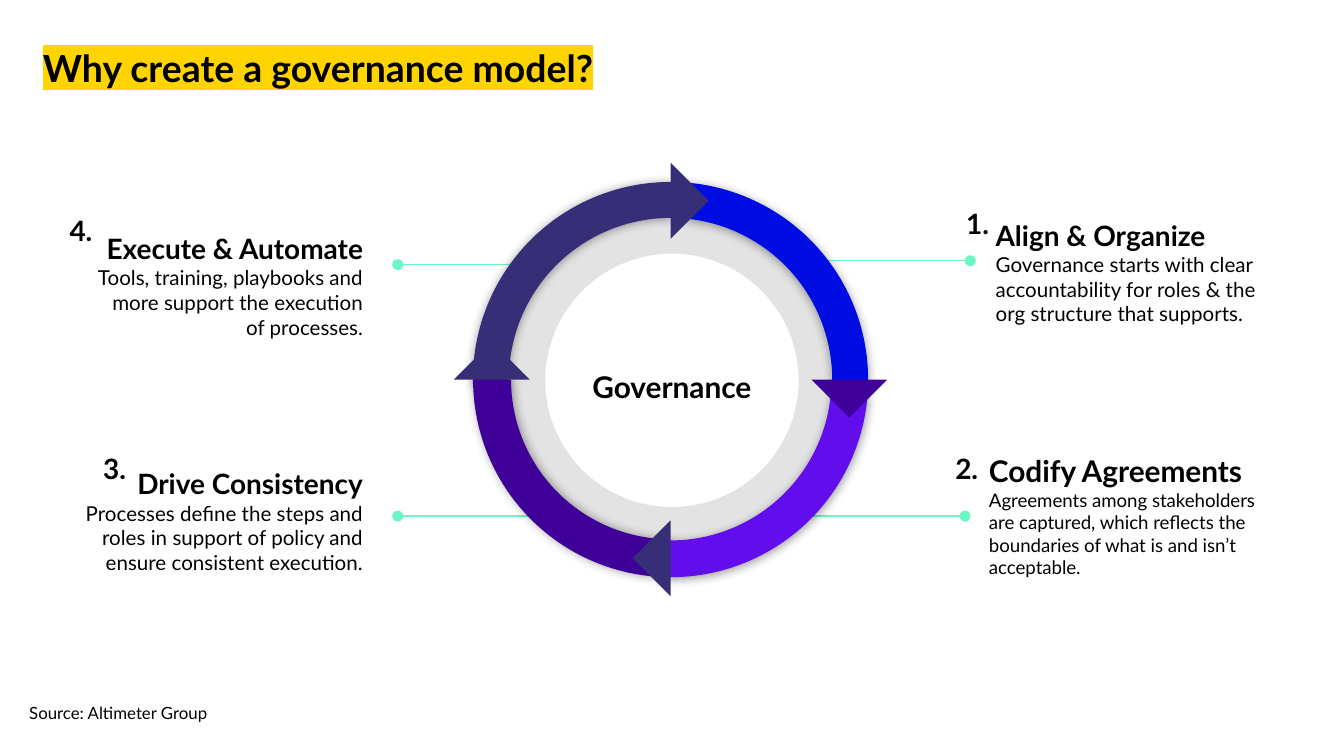
from math import cos, radians, sin

from lxml import etree
from pptx import Presentation
from pptx.dml import color
from pptx.enum import shapes, text
from pptx.oxml import ns
from pptx.util import Pt

FONT = "Lato"
BLACK, MINT, YELLOW = "000000", "6CF7C5", "FFD400"
NAVY, BLUE, PURPLE, VIOLET = "362E77", "000DE2", "3F0099", "620DEC"
LEFT, CENTER, RIGHT = text.PP_ALIGN.LEFT, text.PP_ALIGN.CENTER, text.PP_ALIGN.RIGHT
TOP, MIDDLE = text.MSO_ANCHOR.TOP, text.MSO_ANCHOR.MIDDLE


def rgb(value):
    """Turn a hex string into a colour."""
    return color.RGBColor.from_string(value)


def add_xml(parent, tag, **attributes):
    """Append a DrawingML element and return it."""
    return etree.SubElement(parent, ns.qn(tag), attributes)


def add_colour(parent, value, alpha=None):
    """Append an RGB colour with an optional opacity in percent."""
    colour = add_xml(parent, "a:srgbClr", val=value)
    if alpha is not None:
        add_xml(colour, "a:alpha", val=str(alpha * 1000))


def style(paragraph, size, bold=False, align=LEFT):
    """Set the font and alignment of a paragraph."""
    paragraph.alignment = align
    font = paragraph.font
    font.name, font.size, font.bold = FONT, Pt(size), bold
    font.color.rgb = rgb(BLACK)


def add_text(parts, box, lines, align=LEFT, anchor=TOP):
    """Add a text box holding (wording, size, bold) lines."""
    frame = parts.add_textbox(*map(Pt, box)).text_frame
    frame.word_wrap = True
    frame.vertical_anchor = anchor
    frame.margin_left = frame.margin_right = Pt(7.2)
    frame.margin_top = frame.margin_bottom = Pt(7.2)
    for index, (wording, size, bold) in enumerate(lines):
        paragraph = frame.add_paragraph() if index else frame.paragraphs[0]
        paragraph.text = wording
        style(paragraph, size, bold, align)
    return frame


def add_filled(parts, kind, box, fill, rotation=0):
    """Add a preset shape with a plain fill and no line."""
    shape = parts.add_shape(kind, *map(Pt, box))
    shape.shadow.inherit = False
    shape.fill.solid()
    shape.fill.fore_color.rgb = rgb(fill)
    shape.line.fill.background()
    shape.rotation = rotation
    return shape


def centred(x, y, width, height):
    """Return the box of a given size around a point."""
    return x - width / 2, y - height / 2, width, height


def add_title(slide, box, wording):
    """Place the highlighted slide title."""
    title = slide.shapes.title
    title.left, title.top, title.width, title.height = map(Pt, box)
    frame = title.text_frame
    frame.auto_size = text.MSO_AUTO_SIZE.NONE
    frame.vertical_anchor = TOP
    frame.margin_left = frame.margin_right = Pt(5)
    frame.margin_top = frame.margin_bottom = Pt(2.9)
    frame.text = wording
    paragraph = frame.paragraphs[0]
    style(paragraph, 20, True)
    paragraph.line_spacing = 0.9
    properties = paragraph.runs[0].font._element
    add_colour(add_xml(properties, "a:highlight"), YELLOW)


def add_callout(slide, box, number, number_offset, heading, body, sizes, line_offsets, after, align):
    """Place a numbered explanation and its line to the ring."""
    left, top = box[:2]
    parts = slide.shapes.add_group_shape().shapes
    heading_size, body_size = sizes
    frame = add_text(parts, box, [(heading, heading_size, True), (body, body_size, False)], align, MIDDLE)
    frame.paragraphs[1].space_after = Pt(after)

    start, end, height = line_offsets
    leader = parts.add_connector(
        shapes.MSO_CONNECTOR.STRAIGHT,
        Pt(left + start), Pt(top + height), Pt(left + end), Pt(top + height))
    leader.line.color.rgb = rgb(MINT)
    leader.line.width = Pt(0.75)
    add_xml(leader.line._get_or_add_ln(), "a:tailEnd", type="oval")
    add_xml(leader._element.spPr, "a:effectLst")

    across, down = number_offset
    add_text(slide.shapes, (left + across, top + down, 28.8, 32.4), [(number, 15, True)])


def add_arc(parts, box, start, end, thickness, fill, rotation, flipped, shadow_angle):
    """Add one shadowed quarter of the ring, with angles in degrees."""
    arc = add_filled(parts, shapes.MSO_SHAPE.BLOCK_ARC, box, fill, rotation)
    arc.adjustments[0] = start * 0.6
    arc.adjustments[1] = end * 0.6
    arc.adjustments[2] = thickness
    properties = arc._element.spPr
    if flipped:
        properties.xfrm.set("flipH", "1")
    shadow = add_xml(
        properties.find(ns.qn("a:effectLst")), "a:outerShdw",
        blurRad=str(Pt(5.6)), dist=str(Pt(0.8)), dir=str(shadow_angle * 60000), rotWithShape="0")
    add_colour(shadow, BLACK, 40)


def add_ring(slide, box, label):
    """Place the cycle of four arcs, its arrowheads and its label."""
    left, top, width, height = box
    middle_x, middle_y = left + width / 2, top + height / 2
    parts = slide.shapes

    track = add_filled(parts, shapes.MSO_SHAPE.DONUT, centred(middle_x + 0.7, middle_y + 0.4, 200.2, 200.2), BLACK)
    track.adjustments[0] = 0.161
    track_colour = track.fill._xPr.find(ns.qn("a:solidFill"))[0]
    add_xml(track_colour, "a:alpha", val="11000")

    quarters = [
        (239.14, 331.21, 0.091, NAVY, 330, True, 90),
        (242.43, 331.7, 0.091, BLUE, 30, False, 90),
        (300.7, 29.98, 0.096, PURPLE, 150, False, 0),
        (299.45, 25.49, 0.093, VIOLET, 210, True, 90),
    ]
    for quarter in quarters:
        add_arc(parts, box, *quarter)

    radius = 95.8
    for angle, fill in [(180, NAVY), (0, PURPLE), (90, NAVY), (270, NAVY)]:
        x = middle_x + radius * cos(radians(angle))
        y = middle_y + radius * sin(radians(angle))
        add_filled(parts, shapes.MSO_SHAPE.RIGHT_TRIANGLE, centred(x, y, 28.8, 28.8), fill, (angle - 45) % 360)

    frame = add_text(parts, centred(middle_x + 0.7, middle_y + 2.5, 113.8, 63.4), [(label, 16, True)], CENTER, MIDDLE)
    frame.paragraphs[0].line_spacing = 1.15


def main():
    """Build and save the slide."""
    deck = Presentation()
    deck.slide_width, deck.slide_height = Pt(720), Pt(405)
    slide = deck.slides.add_slide(deck.slide_layouts[5])
    add_title(slide, (18, 23.8, 458.6, 45.4), "Why create a governance model?")

    callouts = [
        ((526.3, 105.8, 160.6, 79.9), "1.", (-15.8, -2.1), "Align & Organize",
         "Governance starts with clear accountability for roles & the org structure that supports.",
         (15, 11), (-87.8, -6.5, 33.9), 16, LEFT),
        ((522.7, 236.2, 157.7, 79.9), "2.", (-18, -1.5), "Codify Agreements",
         "Agreements among stakeholders are captured, which reflects the boundaries of what is and isn’t acceptable.",
         (16, 10), (-87.8, -5.7, 40.3), 0, LEFT),
        ((23.8, 239, 177.8, 79.9), "3.", (24.4, -4.3), "Drive Consistency",
         "Processes define the steps and roles in support of policy and ensure consistent execution.",
         (15, 11), (272.8, 189.3, 37.5), 16, RIGHT),
        ((44.6, 113, 157, 79.9), "4.", (-14.4, -5.7), "Execute & Automate",
         "Tools, training, playbooks and more support the execution of processes.",
         (15, 11), (234.8, 168.5, 28.8), 16, RIGHT),
    ]
    for callout in callouts:
        add_callout(slide, *callout)

    add_ring(slide, (253.4, 97.5, 211.7, 211.7), "Governance")
    add_text(slide.shapes, (8.6, 370.8, 134.6, 25.2), [("Source: Altimeter Group", 9, False)])
    deck.save("out.pptx")


if __name__ == "__main__":
    main()
